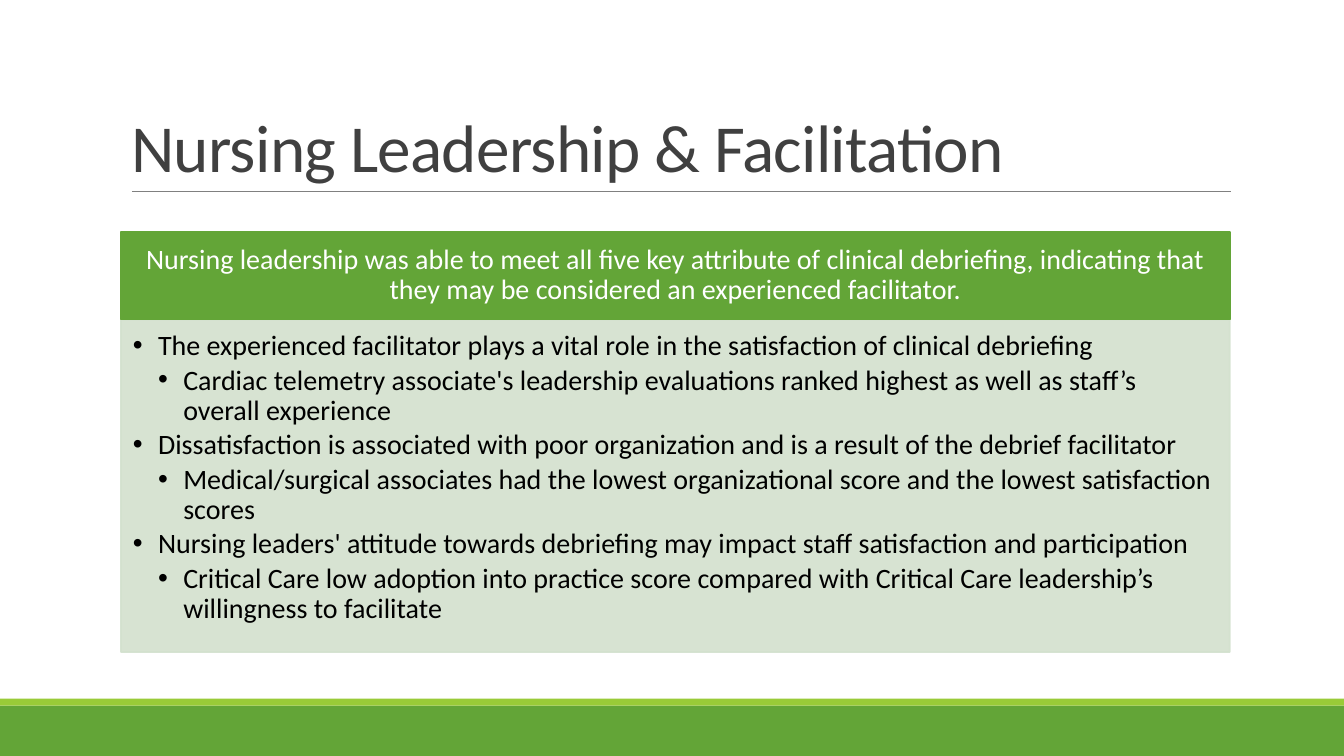
from pptx import Presentation
from pptx.dml.color import RGBColor
from pptx.enum.shapes import MSO_CONNECTOR, MSO_SHAPE
from pptx.enum.text import MSO_ANCHOR, MSO_AUTO_SIZE, PP_ALIGN
from pptx.oxml.ns import qn
from pptx.util import Pt
from lxml.etree import SubElement

GREEN = RGBColor(0x63, 0xA5, 0x37)
LIME = RGBColor(0x99, 0xCB, 0x38)
PALE_GREEN = RGBColor(0xD3, 0xE1, 0xCE)
GRAY = RGBColor(0x80, 0x80, 0x80)
DARK_GRAY = RGBColor(0x40, 0x40, 0x40)
WHITE = RGBColor(0xFF, 0xFF, 0xFF)
BLACK = RGBColor(0, 0, 0)

LEFT, WIDTH = 86.4, 792
INDENT = 18

FINDINGS = [
    (0, "The experienced facilitator plays a vital role in the satisfaction of clinical debriefing"),
    (1, "Cardiac telemetry associate's leadership evaluations ranked highest as well as staff’s overall experience"),
    (0, "Dissatisfaction is associated with poor organization and is a result of the debrief facilitator"),
    (1, "Medical/surgical associates had the lowest organizational score and the lowest satisfaction scores"),
    (0, "Nursing leaders' attitude towards debriefing may impact staff satisfaction and participation"),
    (1, "Critical Care low adoption into practice score compared with Critical Care leadership’s willingness to facilitate"),
]


def place(shape, left, top, width, height):
    shape.left, shape.top = Pt(left), Pt(top)
    shape.width, shape.height = Pt(width), Pt(height)


def style_text(para, size, color, line_spacing, space_after=0):
    para.line_spacing = line_spacing
    para.space_before, para.space_after = Pt(0), Pt(space_after)
    for span in para.runs:
        span.font.name = "Calibri"
        span.font.size = Pt(size)
        span.font.color.rgb = color


deck = Presentation()
deck.slide_width, deck.slide_height = Pt(960), Pt(540)
page = deck.slides.add_slide(deck.slide_layouts[1])

# Footer bands and heading bar
bars = []
for left, top, width, height, color in [
    (0, 504, 960, 36, GREEN),
    (0, 499, 960, 5, LIME),
    (LEFT, 165.6, WIDTH, 62.6, GREEN),
]:
    bar = page.shapes.add_shape(MSO_SHAPE.RECTANGLE, Pt(left), Pt(top), Pt(width), Pt(height))
    bar.shadow.inherit = False
    bar.fill.solid()
    bar.fill.fore_color.rgb = color
    bar.line.fill.background()
    bars.append(bar)

# Title
title = page.shapes.title
place(title, LEFT, 22.3, WIDTH, 114.5)
title.text_frame.text = "Nursing Leadership & Facilitation"
title.text_frame.auto_size = MSO_AUTO_SIZE.NONE
title.text_frame.vertical_anchor = MSO_ANCHOR.BOTTOM
heading = title.text_frame.paragraphs[0]
heading.alignment = PP_ALIGN.LEFT
style_text(heading, 48, DARK_GRAY, 0.85)
heading.runs[0].font._element.set("spc", "-50")

# Rule under the title
rule = page.shapes.add_connector(MSO_CONNECTOR.STRAIGHT, Pt(94.3), Pt(136.8), Pt(879.1), Pt(136.8))
rule.line.color.rgb = GRAY
rule.line.width = Pt(0.5)
SubElement(rule._element.spPr, qn("a:effectLst"))

# Key statement in the heading bar
statement = bars[-1]
statement.line.color.rgb = GREEN
statement.line.width = Pt(1.25)
frame = statement.text_frame
frame.text = "Nursing leadership was able to meet all five key attribute of clinical debriefing, indicating that they may be considered an experienced facilitator."
frame.word_wrap = True
frame.vertical_anchor = MSO_ANCHOR.MIDDLE
frame.margin_left = frame.margin_right = Pt(11.5)
frame.margin_top = frame.margin_bottom = Pt(6.5)
frame.paragraphs[0].alignment = PP_ALIGN.CENTER
style_text(frame.paragraphs[0], 20, WHITE, 0.9, 7)

# Findings panel
panel = page.placeholders[1]
place(panel, LEFT, 228.2, WIDTH, 237.6)
panel.fill.solid()
panel.fill.fore_color.rgb = PALE_GREEN
panel.line.color.rgb = PALE_GREEN
panel.line.width = Pt(1.25)
for color_element in panel._element.spPr.iter(qn("a:srgbClr")):
    SubElement(color_element, qn("a:alpha")).set("val", "90000")

frame = panel.text_frame
frame.auto_size = MSO_AUTO_SIZE.NONE
frame.word_wrap = True
frame.vertical_anchor = MSO_ANCHOR.TOP
frame.margin_left = frame.margin_top = Pt(8.5)
frame.margin_right, frame.margin_bottom = Pt(11.5), Pt(12.5)
frame.text = "\n".join(text for level, text in FINDINGS)
for para, (level, text) in zip(frame.paragraphs, FINDINGS):
    para.level = level
    para.alignment = PP_ALIGN.LEFT
    style_text(para, 20, BLACK, 0.9, 3)
    properties = para._element.get_or_add_pPr()
    properties.set("marL", str(Pt(INDENT * (level + 1))))
    properties.set("indent", str(Pt(-INDENT)))
    SubElement(properties, qn("a:buFont")).set("typeface", "Arial")
    SubElement(properties, qn("a:buChar")).set("char", "•")

deck.save("out.pptx")
